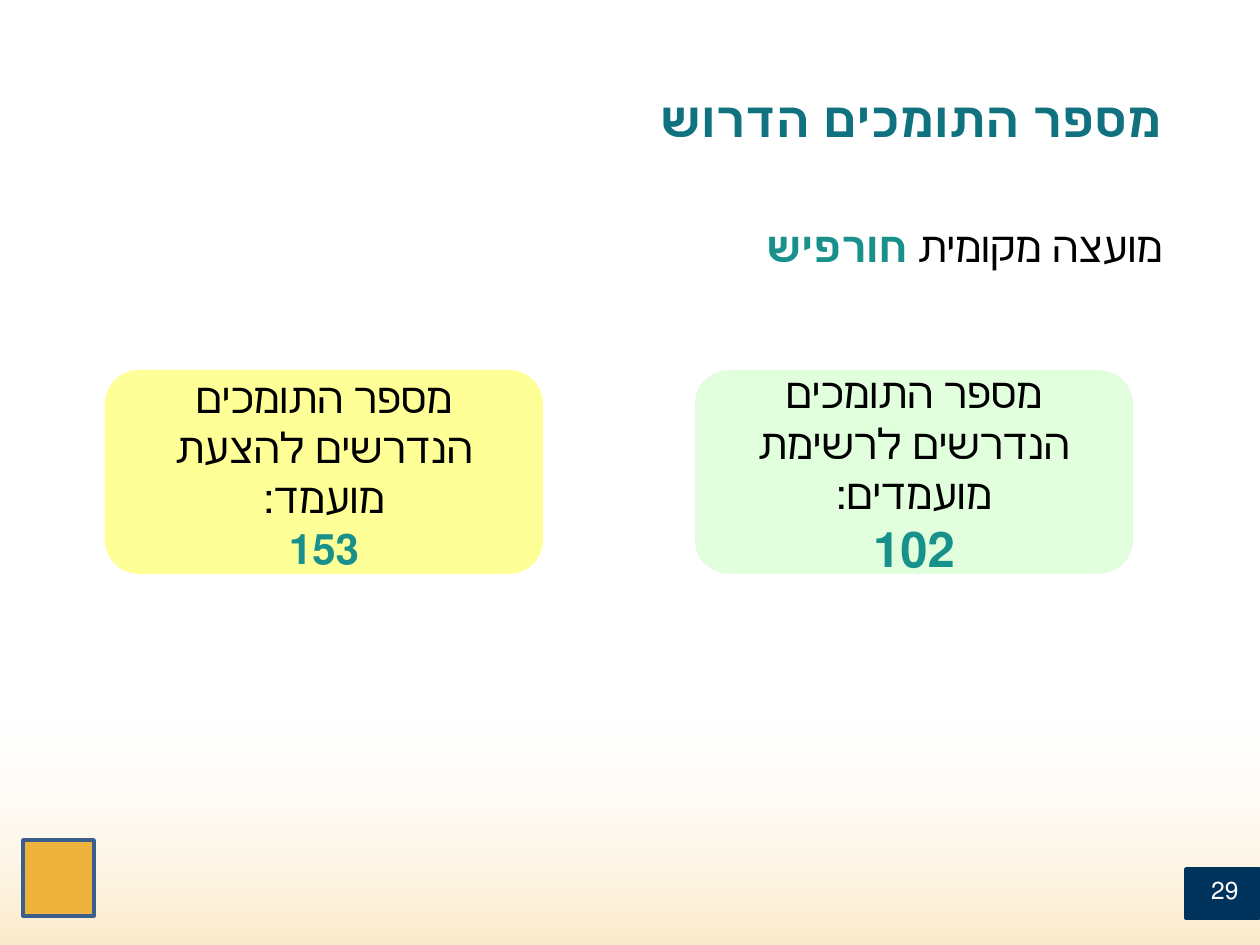
from lxml.etree import SubElement
from pptx import Presentation
from pptx.dml.color import RGBColor
from pptx.enum.shapes import MSO_SHAPE as Kind
from pptx.enum.text import MSO_ANCHOR as Anchor, PP_ALIGN as Align
from pptx.oxml.ns import qn
from pptx.util import Emu, Pt

SCALE = 914400 / 126
BLACK = RGBColor(0x00, 0x00, 0x00)
WHITE = RGBColor(0xFF, 0xFF, 0xFF)
NAVY = RGBColor(0x00, 0x33, 0x5C)
BLUE = RGBColor(0x3A, 0x5F, 0x8C)
TEAL = RGBColor(0x10, 0x71, 0x7F)
GREEN = RGBColor(0x18, 0x91, 0x8C)
MINT = RGBColor(0xE2, 0xFF, 0xDD)
LEMON = RGBColor(0xFF, 0xFF, 0x97)
GOLD = RGBColor(0xEF, 0xB2, 0x3C)
AMBER = RGBColor(0xF3, 0xB9, 0x46)
CREAM = RGBColor(0xFC, 0xEC, 0xD1)

BODY = {"size": Pt(24), "bold": False, "color": BLACK}
MARK = {"size": Pt(24), "bold": True, "color": GREEN}
BIG = MARK | {"size": Pt(28)}
HEAD = {"size": Pt(28), "bold": True, "color": TEAL}
PAGE = {"size": Pt(14), "bold": False, "color": WHITE}


def px(num):
    return Emu(round(num * SCALE))


class Deck:
    face = "Calibri"

    def __init__(self, wide, high):
        self.prs = Presentation()
        self.prs.slide_width, self.prs.slide_height = px(wide), px(high)
        self.slide = self.prs.slides.add_slide(self.prs.slide_layouts[5])

    def label(self, shape, paras, align=Align.RIGHT, anchor=Anchor.TOP):
        frame = shape.text_frame
        frame.word_wrap = True
        frame.vertical_anchor = anchor
        for i, runs in enumerate(paras):
            para = frame.add_paragraph() if i else frame.paragraphs[0]
            para.alignment = align
            para._p.get_or_add_pPr().set("rtl", "1")
            for text, style in runs:
                run = para.add_run()
                run.text = text
                run.font.name = self.face
                for key, val in style.items():
                    if key == "color":
                        run.font.color.rgb = val
                    else:
                        setattr(run.font, key, val)

    def title(self, box, text):
        shape = self.slide.shapes.title
        for key, val in zip(("left", "top", "width", "height"), box):
            setattr(shape, key, px(val))
        self.label(shape, [[(text, HEAD)]], anchor=Anchor.MIDDLE)

    def text(self, box, paras):
        shape = self.slide.shapes.add_textbox(*map(px, box))
        self.label(shape, paras)

    def shape(self, box, fill=None, line=None, kind=Kind.RECTANGLE):
        shape = self.slide.shapes.add_shape(kind, *map(px, box))
        shape.shadow.inherit = False
        if fill is not None:
            shape.fill.solid()
            shape.fill.fore_color.rgb = fill
        if line is None:
            shape.line.fill.background()
        else:
            shape.line.color.rgb = line
            shape.line.width = Pt(2)
        return shape

    def card(self, box, fill, paras):
        shape = self.shape(box, fill, kind=Kind.ROUNDED_RECTANGLE)
        self.label(shape, paras, Align.CENTER, Anchor.MIDDLE)

    def fade(self, box, stops):
        fill = self.shape(box).fill
        fill.gradient()
        fill.gradient_angle = 270
        for stop, (pos, color, alpha) in zip(fill.gradient_stops, stops):
            stop.position = pos
            stop.color.rgb = color
            node = stop._gs.find(qn("a:srgbClr"))
            SubElement(node, qn("a:alpha"), val=str(alpha * 1000))


def main():
    deck = Deck(1260, 945)
    deck.fade((0, 721, 1260, 224), [(0, CREAM, 0), (1, AMBER, 29)])
    deck.shape((1186, 869, 73, 49), NAVY, NAVY)
    deck.text((1186, 869, 65, 39), [[("29", PAGE)]])
    deck.title((295, 26, 879, 183), "מספר התומכים הדרוש")
    deck.text((44, 214, 1131, 694), [[("מועצה מקומית ", BODY), ("חורפיש", MARK)]])
    cards = [
        (105, LEMON, "להצעת מועמד:", "153", MARK),
        (695, MINT, "לרשימת מועמדים:", "102", BIG),
    ]
    for left, fill, goal, count, style in cards:
        head = f"מספר התומכים הנדרשים {goal}"
        deck.card((left, 370, 438, 204), fill, [[(head, BODY)], [(count, style)]])
    deck.shape((23, 840, 71, 76), GOLD, BLUE)
    deck.prs.save("out.pptx")


if __name__ == "__main__":
    main()
